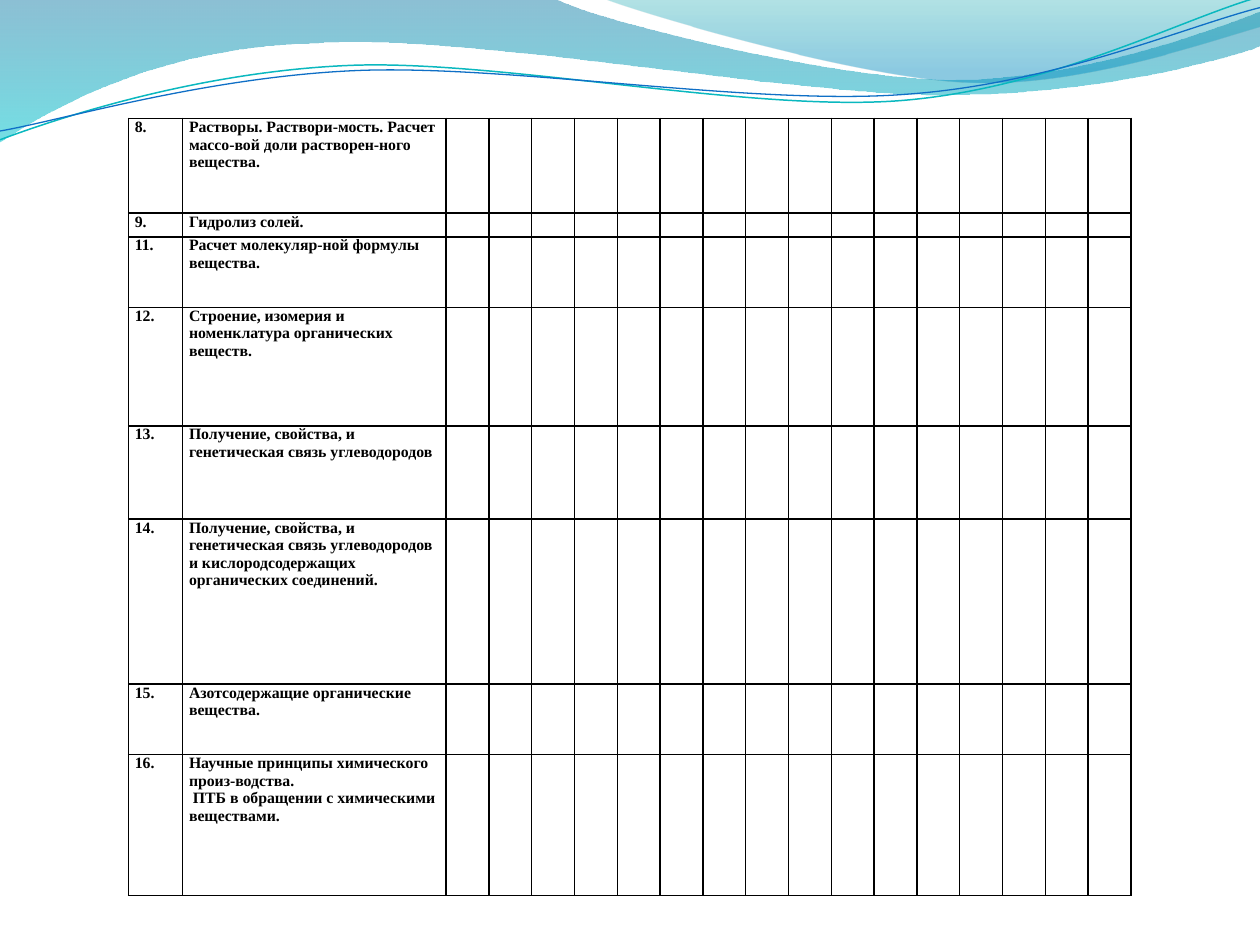
import math

import pptx
import pptx.dml.color
import pptx.oxml
import pptx.oxml.ns
import pptx.util

Inches, Pt = pptx.util.Inches, pptx.util.Pt
RGB = pptx.dml.color.RGBColor.from_string
qn, NS = pptx.oxml.ns.qn, pptx.oxml.ns.nsdecls("a")

TOPICS = [
    ("8.", ["Растворы. Раствори-мость. Расчет массо-вой доли растворен-ного вещества."], 0.75),
    ("9.", ["Гидролиз солей."], 0.19),
    ("11.", ["Расчет молекуляр-ной формулы вещества."], 0.56),
    ("12.", ["Строение, изомерия и номенклатура органических веществ."], 0.94),
    ("13.", ["Получение, свойства, и генетическая связь углеводородов"], 0.74),
    ("14.", ["Получение, свойства, и генетическая связь углеводородов и "
             "кислородсодержащих органических соединений."], 1.31),
    ("15.", ["Азотсодержащие органические вещества."], 0.56),
    ("16.", ["Научные принципы химического произ-водства.",
             " ПТБ в обращении с химическими веществами."], 1.12),
]
COLUMNS = [0.43, 2.09] + [0.34] * 16
TABLE_LEFT, TABLE_TOP = 1.02, 0.94

THEME = {
    "font": {"name": "Times New Roman", "size": Pt(9), "bold": True},
    "text": "000000",
    "border": ("000000", 1),
    "wide_wave": [(0, "0074A1", 45), (1, "00C6CF", 55)],
    "right_wave": [(0, "00A1A9", 30), (0.8, "008BBF", 45)],
    "teal_line": ("0AB8BF", 0.85),
    "blue_line": ("0F6FC6", 0.75),
}

# Style, box, rotation, start; each step is a line (one point) or a curve (three).
WAVES = [
    ("wide_wave", (-0.01, -0.01, 10.02, 1.14), 0, (0, 0), [
        [(4.4, -0.01)],
        [(4.76, 0.17), (6.64, 0.63), (7.58, 0.63)],
        [(8.53, 0.63), (9.58, 0.26), (10, 0.09)],
        [(10.01, 0.36)],
        [(9.83, 0.44), (8.7, 0.76), (7.46, 0.75)],
        [(6.22, 0.75), (3.82, 0.28), (2.57, 0.34)],
        [(1.29, 0.36), (0.46, 0.83), (-0.01, 1.13)],
        [(0, 0)],
    ]),
    ("right_wave", (4.79, -0.01, 5.21, 0.7), 0, (4.79, -0.01), [
        [(5.09, 0.11), (6.82, 0.62), (7.69, 0.65)],
        [(8.56, 0.69), (9.61, 0.32), (10, 0.21)],
        [(10, 0)],
        [(4.79, -0.01)],
    ]),
    ("teal_line", (-0.02, 0.22, 10.02, 0.71), 357.3, (0, 1.11), [
        [(0.48, 0.93), (1.58, 0.57), (2.77, 0.52)],
        [(3.95, 0.47), (5.93, 0.89), (7.13, 0.8)],
        [(8.33, 0.71), (9.38, 0.15), (9.98, -0.02)],
    ]),
    ("blue_line", (-0.02, 0.3, 10.03, 0.58), 357.3, (0, 1.04), [
        [(0.47, 0.96), (1.64, 0.61), (2.83, 0.56)],
        [(4.03, 0.51), (5.97, 0.84), (7.17, 0.75)],
        [(8.36, 0.67), (9.41, 0.21), (10, 0.06)],
    ]),
]


def shape_wave(sp, box, rotation, start, steps):
    left, top, width, height = box
    angle = math.radians(-rotation)
    cos, sin = math.cos(angle), math.sin(angle)

    def point_xml(point):
        dx, dy = point[0] - left - width / 2, point[1] - top - height / 2
        x, y = width / 2 + dx * cos - dy * sin, height / 2 + dx * sin + dy * cos
        return f'<a:pt x="{Inches(x)}" y="{Inches(y)}"/>'

    for name, value in zip(("left", "top", "width", "height"), box):
        setattr(sp, name, Inches(value))
    sp.rotation = rotation
    outline = next(sp._element.iter(qn("a:path")))
    outline.set("w", str(Inches(width)))
    outline.set("h", str(Inches(height)))
    segments = [("moveTo", [start])]
    segments += [("lnTo" if len(step) == 1 else "cubicBezTo", step) for step in steps]
    drawn = [node for node in outline if node.tag != qn("a:close")]
    for node, (tag, points) in zip(drawn, segments):
        outline.replace(node, pptx.oxml.parse_xml(
            f'<a:{tag} {NS}>{"".join(map(point_xml, points))}</a:{tag}>'))


def add_wave(s, style, box, rotation, start, steps):
    look = THEME[style]
    filled = isinstance(look, list)
    anchors = [(Inches(x), Inches(y)) for x, y in [start] + [step[-1] for step in steps]]
    builder = s.shapes.build_freeform(*anchors[0])
    builder.add_line_segments(anchors[1:], close=filled)
    sp = builder.convert_to_shape()
    shape_wave(sp, box, rotation, start, steps)
    sp.shadow.inherit = False
    if not filled:
        color, width = look
        sp.fill.background()
        sp.line.color.rgb, sp.line.width = RGB(color), Pt(width)
        return
    sp.line.fill.background()
    sp.fill.gradient()
    sp.fill.gradient_angle = 270
    for stop, (position, color, _) in zip(sp.fill.gradient_stops, look):
        stop.position, stop.color.rgb = position, RGB(color)
    for node, (_, _, opacity) in zip(sp._element.spPr.iter(qn("a:srgbClr")), look):
        node.append(pptx.oxml.parse_xml(f'<a:alpha {NS} val="{opacity * 1000}"/>'))


def format_cell(cell, paragraphs):
    color, width = THEME["border"]
    tcPr = cell._tc.get_or_add_tcPr()
    for side in "LRTB":
        tcPr.append(pptx.oxml.parse_xml(
            f'<a:ln{side} {NS} w="{Pt(width)}"><a:solidFill>'
            f'<a:srgbClr val="{color}"/></a:solidFill></a:ln{side}>'))
    cell.fill.background()
    margins = {"margin_left": 0.05, "margin_right": 0.05, "margin_top": 0, "margin_bottom": 0}
    for name, value in margins.items():
        setattr(cell, name, Inches(value))
    tf = cell.text_frame
    for i, text in enumerate(paragraphs):
        p = tf.add_paragraph() if i else tf.paragraphs[0]
        r = p.add_run()
        r.text = text
        for name, value in THEME["font"].items():
            setattr(r.font, name, value)
        r.font.color.rgb = RGB(THEME["text"])
    if not paragraphs:
        size = int(THEME["font"]["size"].pt * 100)
        tf.paragraphs[0]._p.append(pptx.oxml.parse_xml(f'<a:endParaRPr {NS} sz="{size}"/>'))


def add_topics(s):
    heights = [height for _, _, height in TOPICS]
    table = s.shapes.add_table(
        len(TOPICS), len(COLUMNS), Inches(TABLE_LEFT), Inches(TABLE_TOP),
        Inches(sum(COLUMNS)), Inches(sum(heights))).table
    table.first_row = table.horz_banding = False
    for column, width in zip(table.columns, COLUMNS):
        column.width = Inches(width)
    for row, (number, topic, height) in zip(table.rows, TOPICS):
        row.height = Inches(height)
        contents = [[number], topic] + [[]] * (len(COLUMNS) - 2)
        for cell, paragraphs in zip(row.cells, contents):
            format_cell(cell, paragraphs)


def main():
    """Build the slide with a wave header and the table of chemistry topics."""
    prs = pptx.Presentation()
    prs.slide_width, prs.slide_height = Inches(10), Inches(7.5)
    s = prs.slides.add_slide(prs.slide_layouts[6])
    for wave in WAVES:
        add_wave(s, *wave)
    add_topics(s)
    prs.save("out.pptx")


if __name__ == "__main__":
    main()
